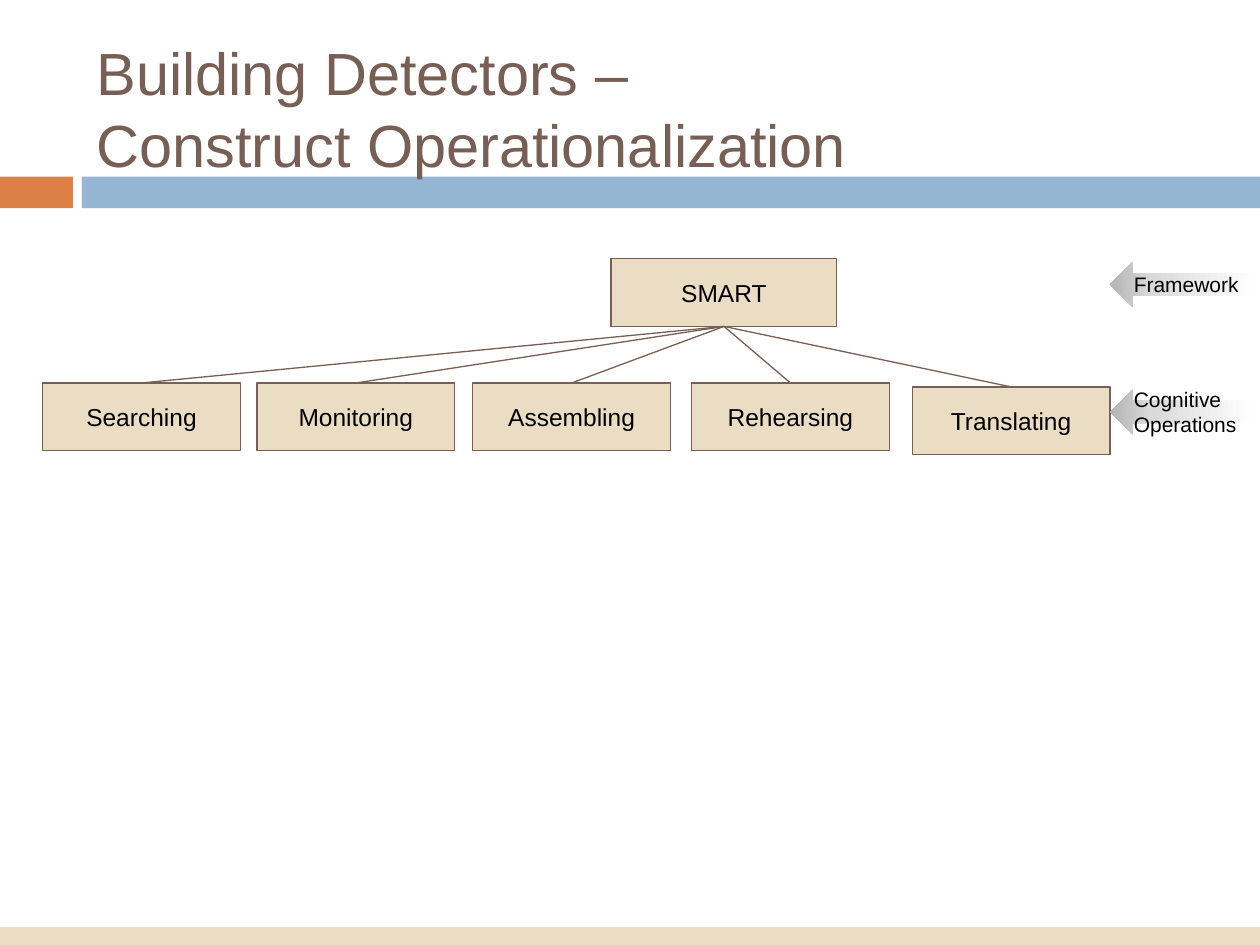
from copy import deepcopy

from lxml.etree import SubElement
from pptx import Presentation
from pptx.dml.color import RGBColor
from pptx.enum.shapes import MSO_CONNECTOR, MSO_SHAPE
from pptx.enum.text import MSO_ANCHOR, PP_ALIGN
from pptx.oxml.ns import qn
from pptx.util import Cm, Pt

COLORS = {
    "brown": "775F55",
    "sand": "EBDDC3",
    "orange": "DD8047",
    "blue": "94B6D2",
    "text": "000000",
}
ARROW_STOPS = [(0, "FFFFFF"), (0.72, "D9D9D9"), (1, "B3B3B3")]
BOX_HEIGHT = 1.37
BOTTOM, TOP = 2, 0  # connection sites of a rectangle


class SlideBuilder:
    font_name = "Arial"
    line_width = Pt(0.75)
    inset = Cm(0.25)

    def __init__(self, slide):
        self.slide = slide

    def color(self, name):
        return RGBColor.from_string(COLORS[name])

    def set_text(self, shape, text, size, color="text", align=PP_ALIGN.LEFT,
                 anchor=MSO_ANCHOR.MIDDLE):
        frame = shape.text_frame
        frame.word_wrap = True
        frame.vertical_anchor = anchor
        frame.margin_left = frame.margin_right = self.inset
        frame.margin_top = frame.margin_bottom = self.inset
        paragraph = frame.paragraphs[0]
        paragraph.text = text
        paragraph.alignment = align
        paragraph.font.name = self.font_name
        paragraph.font.size = Pt(size)
        paragraph.font.color.rgb = self.color(color)

    def shape(self, kind, left, top, width, height):
        """Add a preset shape without shadow or outline."""
        shape = self.slide.shapes.add_shape(
            kind, Cm(left), Cm(top), Cm(width), Cm(height))
        shape.shadow.inherit = False
        shape.line.fill.background()
        return shape

    def bar(self, left, top, width, height, color):
        bar = self.shape(MSO_SHAPE.RECTANGLE, left, top, width, height)
        bar.fill.solid()
        bar.fill.fore_color.rgb = self.color(color)
        return bar

    def title(self, text, left, top, width, height):
        title = self.slide.shapes.add_textbox(
            Cm(left), Cm(top), Cm(width), Cm(height))
        self.set_text(title, text, 34, "brown", anchor=MSO_ANCHOR.BOTTOM)
        title.text_frame.margin_bottom = 0

    def box(self, text, left, top, width):
        box = self.bar(left, top, width, BOX_HEIGHT, "sand")
        box.line.color.rgb = self.color("brown")
        box.line.width = self.line_width
        self.set_text(box, text, 14, align=PP_ALIGN.CENTER)
        return box

    def branch(self, parent, child):
        line = self.slide.shapes.add_connector(MSO_CONNECTOR.STRAIGHT, 0, 0, 0, 0)
        line.begin_connect(parent, BOTTOM)
        line.end_connect(child, TOP)
        line.line.color.rgb = self.color("brown")
        line.line.width = self.line_width
        SubElement(line._element.spPr, qn("a:effectLst"))

    def level_arrow(self, text, top):
        """Add a left arrow that fades out to the right and names a level."""
        arrow = self.shape(MSO_SHAPE.LEFT_ARROW, 22.38, top, 2.92, 0.91)
        arrow.fill.gradient()
        arrow.fill.gradient_angle = 180
        stop_list = arrow._element.spPr.find(qn("a:gradFill")).find(qn("a:gsLst"))
        stop_list.append(deepcopy(stop_list[0]))
        for stop, (position, color) in zip(arrow.fill.gradient_stops, ARROW_STOPS):
            stop.position = position
            stop.color.rgb = RGBColor.from_string(color)
        self.set_text(arrow, text, 12)


def main():
    presentation = Presentation()
    presentation.slide_width = Cm(25.4)
    presentation.slide_height = Cm(19.05)
    builder = SlideBuilder(
        presentation.slides.add_slide(presentation.slide_layouts[6]))

    builder.bar(0, 3.56, 1.47, 0.64, "orange")
    builder.bar(1.65, 3.56, 23.75, 0.64, "blue")
    builder.bar(0, 18.69, 25.4, 0.36, "sand")
    builder.title("Building Detectors –\nConstruct Operationalization",
                  1.7, 0.43, 22.86, 3.18)

    framework = builder.box("SMART", 12.32, 5.21, 4.55)
    operations = [
        ("Searching", 0.86, 7.72),
        ("Monitoring", 5.18, 7.72),
        ("Assembling", 9.53, 7.72),
        ("Rehearsing", 13.94, 7.72),
        ("Translating", 18.39, 7.8),
    ]
    for name, left, top in operations:
        builder.branch(framework, builder.box(name, left, top, 3.99))

    builder.level_arrow("Framework", 5.28)
    builder.level_arrow("Cognitive Operations", 7.85)

    presentation.save("out.pptx")


if __name__ == "__main__":
    main()
